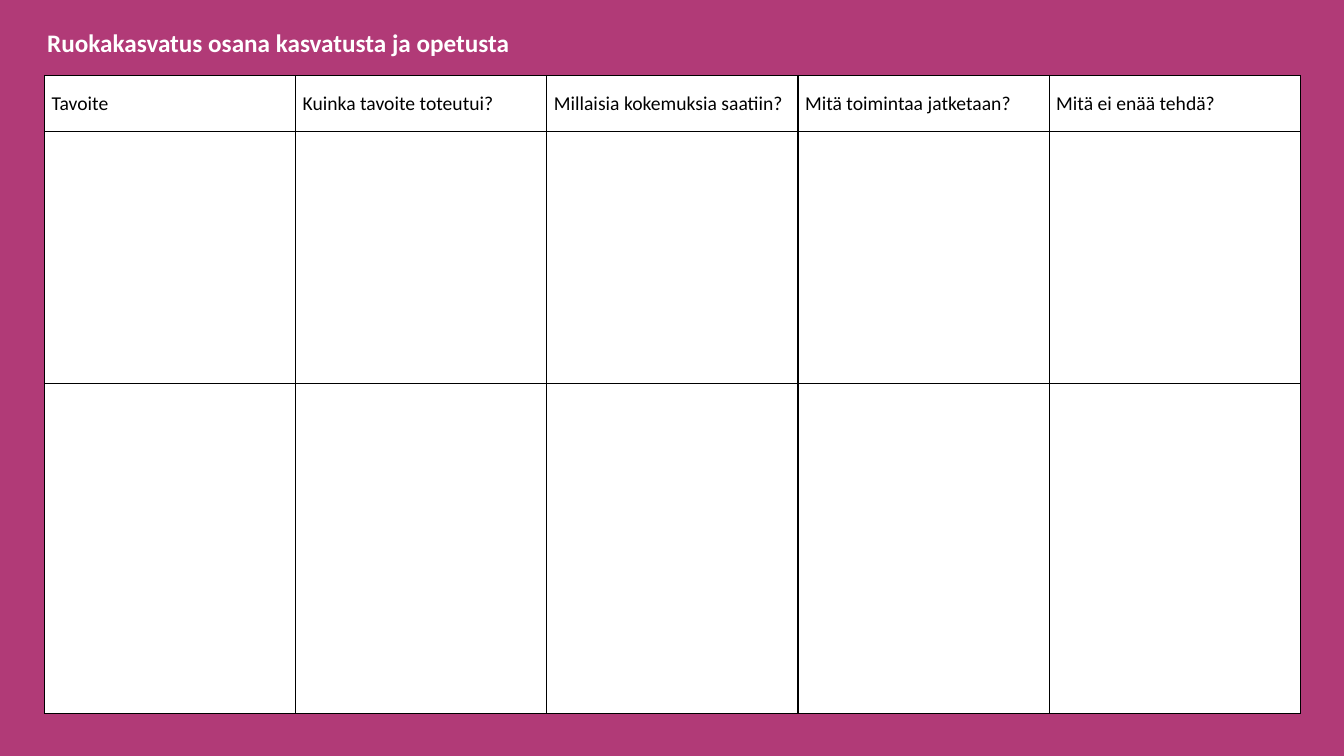
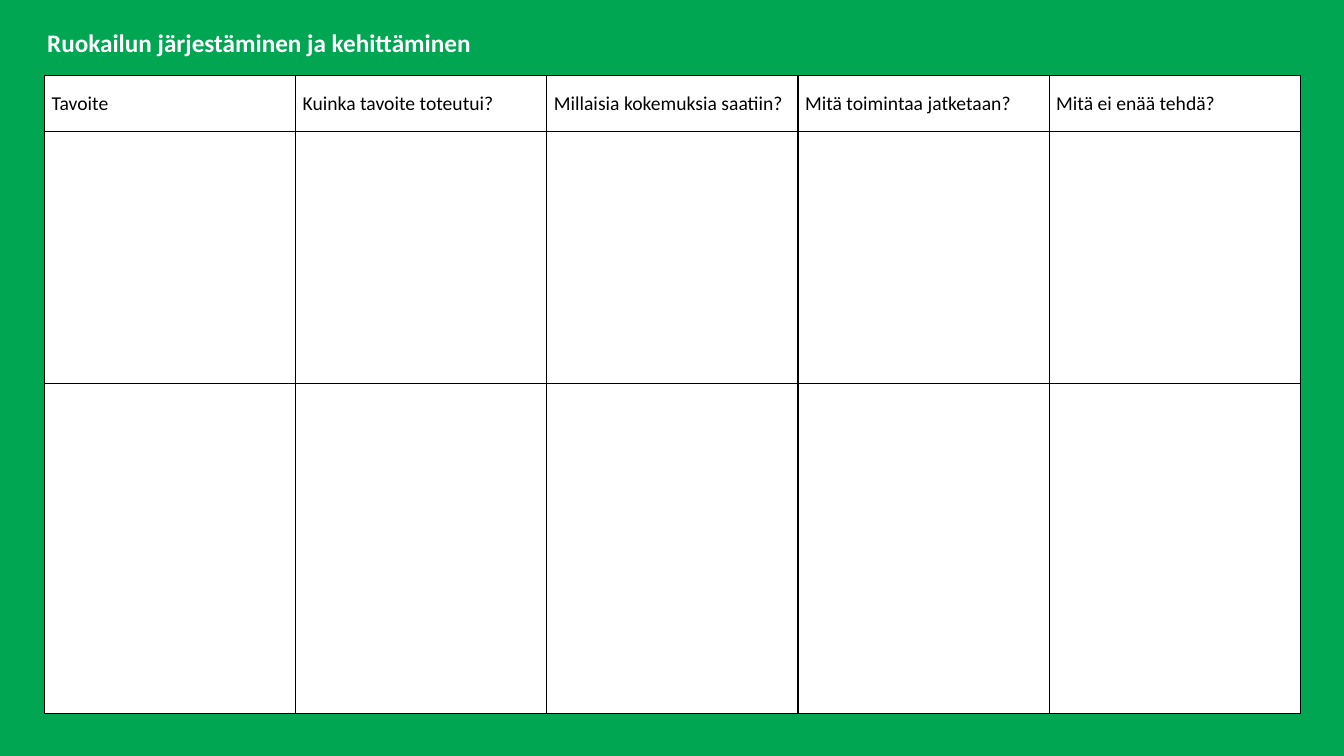
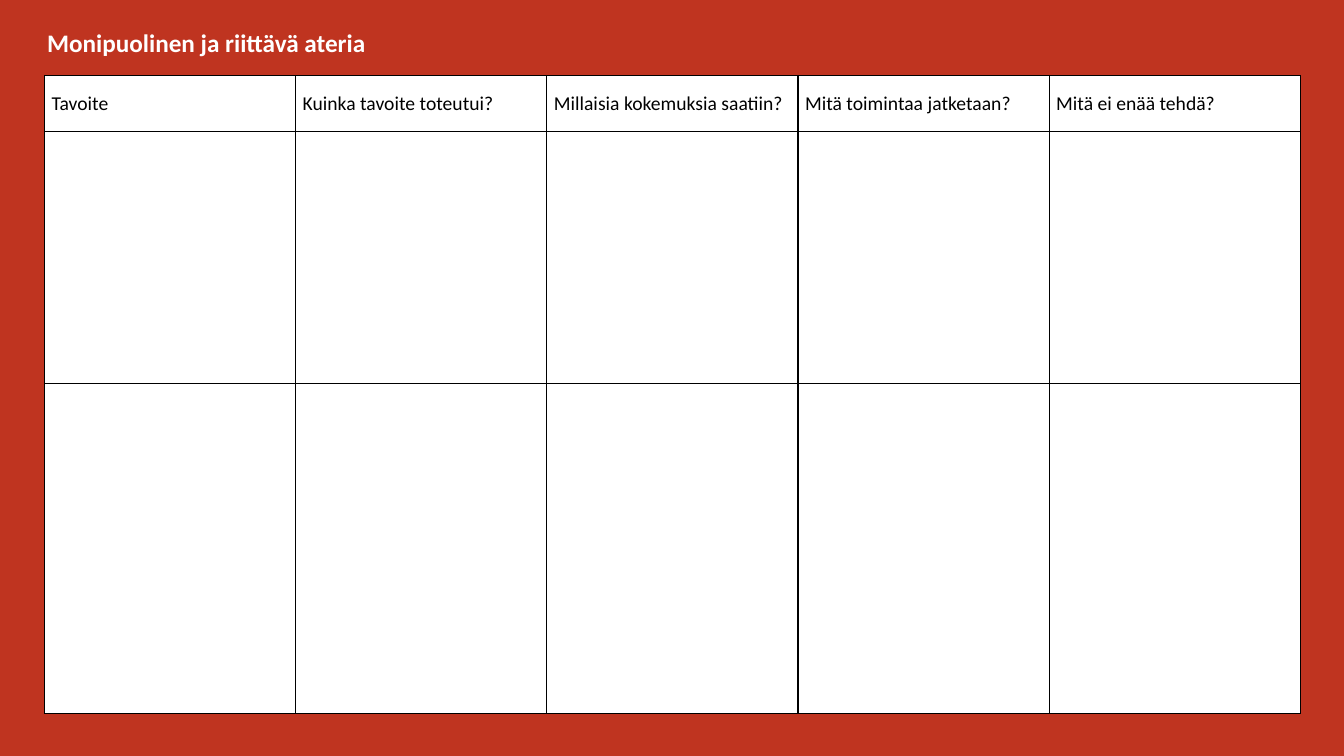
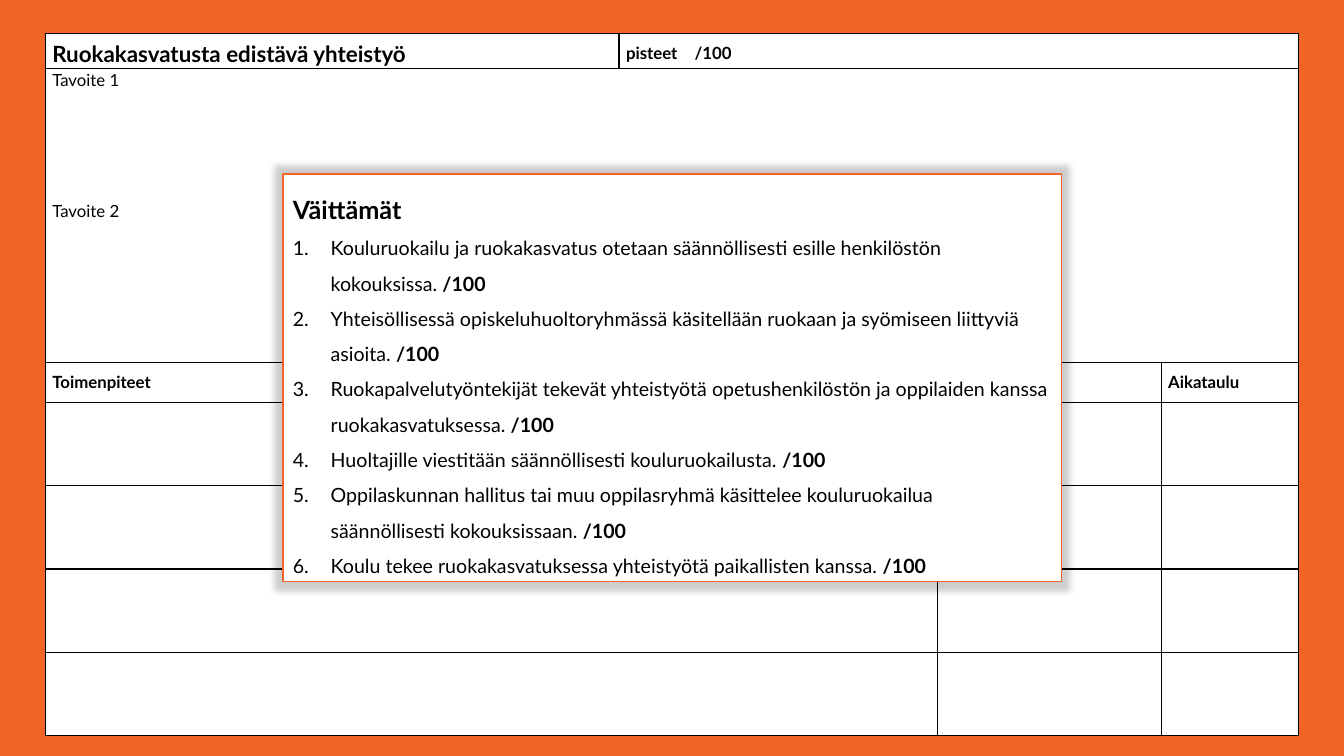
import pptx
import pptx.dml.color
import pptx.enum.shapes
import pptx.enum.text
import pptx.oxml
import pptx.oxml.ns
import pptx.util

Pt = pptx.util.Pt
RGBColor = pptx.dml.color.RGBColor
MIDDLE = pptx.enum.text.MSO_ANCHOR.MIDDLE
TOP = pptx.enum.text.MSO_ANCHOR.TOP
GROW = pptx.enum.text.MSO_AUTO_SIZE.SHAPE_TO_FIT_TEXT

WHITE = RGBColor(0xFF, 0xFF, 0xFF)
BLACK = RGBColor(0, 0, 0)
PINK = RGBColor(0xB1, 0x3A, 0x77)
GREEN = RGBColor(0, 0xA6, 0x51)
RED = RGBColor(0xBF, 0x34, 0x20)
ORANGE = RGBColor(0xF2, 0x65, 0x29)

THEMES = [
    (PINK, "Ruokakasvatus osana kasvatusta ja opetusta"),
    (GREEN, "Ruokailun järjestäminen ja kehittäminen"),
    (RED, "Monipuolinen ja riittävä ateria"),
]
HEADS = ["Tavoite", "Kuinka tavoite toteutui?", "Millaisia kokemuksia saatiin?",
         "Mitä toimintaa jatketaan?", "Mitä ei enää tehdä?"]

PLAN_TITLE = "Ruokakasvatusta edistävä yhteistyö"
POINTS = "pisteet\t/100"
GOALS = ["Tavoite 1", "Tavoite 2"]
PLAN_HEADS = {0: "Toimenpiteet", 3: "Aikataulu"}

CLAIM_HEAD = "Väittämät"
SCORE = "/100"
CLAIMS = [
    "Kouluruokailu ja ruokakasvatus otetaan säännöllisesti esille henkilöstön kokouksissa. ",
    "Yhteisöllisessä opiskeluhuoltoryhmässä käsitellään ruokaan ja syömiseen liittyviä asioita. ",
    "Ruokapalvelutyöntekijät tekevät yhteistyötä opetushenkilöstön ja oppilaiden kanssa ruokakasvatuksessa. ",
    "Huoltajille viestitään säännöllisesti kouluruokailusta. ",
    "Oppilaskunnan hallitus tai muu oppilasryhmä käsittelee kouluruokailua säännöllisesti kokouksissaan. ",
    "Koulu tekee ruokakasvatuksessa yhteistyötä paikallisten kanssa. ",
]

TITLE = dict(name="Calibri", size=Pt(18), bold=True)
HEAD = dict(name="Calibri", size=Pt(14), bold=False)
BODY = dict(name="Lato", size=Pt(12), bold=False)
STRONG = BODY | dict(bold=True)
PLAN = STRONG | dict(size=Pt(16))
CLAIM = BODY | dict(size=Pt(14))
MARK = CLAIM | dict(bold=True)
TOPIC = MARK | dict(size=Pt(18))

CELL = dict(margin_left=Pt(5), margin_right=Pt(5), margin_top=0, margin_bottom=0)
SHADOW = ('<a:effectLst %s><a:outerShdw blurRad="63500" sx="102000" sy="104000" algn="ctr" '
          'rotWithShape="0"><a:srgbClr val="000000"><a:alpha val="20000"/></a:srgbClr>'
          '</a:outerShdw></a:effectLst>')
EDGE = ('<a:%s %s w="12700"><a:solidFill><a:srgbClr val="000000"/></a:solidFill>'
        '<a:prstDash val="solid"/></a:%s>')
NUMBER = '<a:buAutoNum %s type="arabicPeriod"/>'
TABS = '<a:tabLst %s><a:tab pos="622300" algn="l"/></a:tabLst>'
NS = pptx.oxml.ns.nsdecls("a")


def apply(item, style):
    for key, value in style.items():
        setattr(item, key, value)


def write(frame, lines, color=BLACK):
    """Fill a frame with lines: (runs as (text, font) pairs, paragraph format)."""
    for index, (runs, form) in enumerate(lines):
        para = frame.add_paragraph() if index else frame.paragraphs[0]
        apply(para, form)
        for text, font in runs:
            run = para.add_run()
            run.text = text
            apply(run.font, font)
            run.font.color.rgb = color


def add_xml(para, xml, **marks):
    props = para._p.get_or_add_pPr()
    for key, value in marks.items():
        props.set(key, str(value))
    props.append(pptx.oxml.parse_xml(xml % NS))


def fill_cell(cell, lines, anchor=MIDDLE):
    apply(cell, CELL | dict(vertical_anchor=anchor))
    write(cell.text_frame, lines)


def spaced(text, font, ratio=1.07, after=8):
    return [(text, font)], dict(line_spacing=ratio, space_after=Pt(after))


def add_slide(deck, color):
    slide = deck.slides.add_slide(deck.slide_layouts[6])
    slide.background.fill.solid()
    slide.background.fill.fore_color.rgb = color
    return slide


def add_grid(slide, left, top, widths, heights):
    """Add a white table with black cell borders."""
    table = slide.shapes.add_table(len(heights), len(widths), Pt(left), Pt(top),
                                   Pt(sum(widths)), Pt(sum(heights))).table
    apply(table, dict(first_row=False, horz_banding=False))
    for col, width in zip(table.columns, widths):
        col.width = Pt(width)
    for row, height in zip(table.rows, heights):
        row.height = Pt(height)
    for cell in table.iter_cells():
        props = cell._tc.get_or_add_tcPr()
        for side in ("lnL", "lnR", "lnT", "lnB"):
            props.append(pptx.oxml.parse_xml(EDGE % (side, NS, side)))
        cell.fill.solid()
        cell.fill.fore_color.rgb = WHITE
    return table


def add_review(deck, color, title):
    slide = add_slide(deck, color)
    table = add_grid(slide, 31.8, 53.9, [179.42] * len(HEADS), [40, 180, 235.5])
    for col, text in enumerate(HEADS):
        fill_cell(table.cell(0, col), [spaced(text, HEAD)])
    frame = slide.shapes.add_textbox(Pt(26.6), Pt(16), Pt(375), Pt(29)).text_frame
    apply(frame, dict(word_wrap=True, auto_size=GROW))
    write(frame, [([(title, TITLE)], {})], WHITE)


def add_plan(slide):
    rows = [25, 209.5, 18.5] + [59.5] * 4
    table = add_grid(slide, 32.4, 24.2, [409.8, 227.3, 160, 97.9], rows)
    spans = [(0, 1, 3), (1, 0, 3)] + [(row, 0, 1) for row in range(2, len(rows))]
    for row, start, end in spans:
        table.cell(row, start).merge(table.cell(row, end))
    fill_cell(table.cell(0, 0), [spaced(PLAN_TITLE, PLAN, 1.15)])
    points = table.cell(0, 1)
    fill_cell(points, [spaced(POINTS, STRONG, 1.15)])
    add_xml(points.text_frame.paragraphs[0], TABS)
    fill_cell(table.cell(1, 0), [spaced(goal, BODY, after=78) for goal in GOALS], TOP)
    for col, text in PLAN_HEADS.items():
        fill_cell(table.cell(2, col), [spaced(text, STRONG, 1.0)])


def add_claims(slide):
    box = slide.shapes.add_shape(pptx.enum.shapes.MSO_SHAPE.RECTANGLE,
                                 Pt(202.1), Pt(124.4), Pt(556), Pt(291))
    box.fill.solid()
    box.fill.fore_color.rgb = WHITE
    box.line.color.rgb = ORANGE
    box.line.width = Pt(1)
    box._element.spPr.append(pptx.oxml.parse_xml(SHADOW % NS))
    frame = box.text_frame
    apply(frame, dict(word_wrap=True, auto_size=GROW, vertical_anchor=TOP))
    form = dict(line_spacing=1.5, alignment=pptx.enum.text.PP_ALIGN.LEFT)
    lines = [([(CLAIM_HEAD, TOPIC)], form)]
    lines += [([(text, CLAIM), (SCORE, MARK)], form) for text in CLAIMS]
    write(frame, lines)
    for para in frame.paragraphs[1:]:
        add_xml(para, NUMBER, marL=Pt(27), indent=-Pt(27))


def main():
    deck = pptx.Presentation()
    apply(deck, dict(slide_width=Pt(960), slide_height=Pt(540)))
    for color, title in THEMES:
        add_review(deck, color, title)
    slide = add_slide(deck, ORANGE)
    add_plan(slide)
    add_claims(slide)
    deck.save("out.pptx")


if __name__ == "__main__":
    main()
